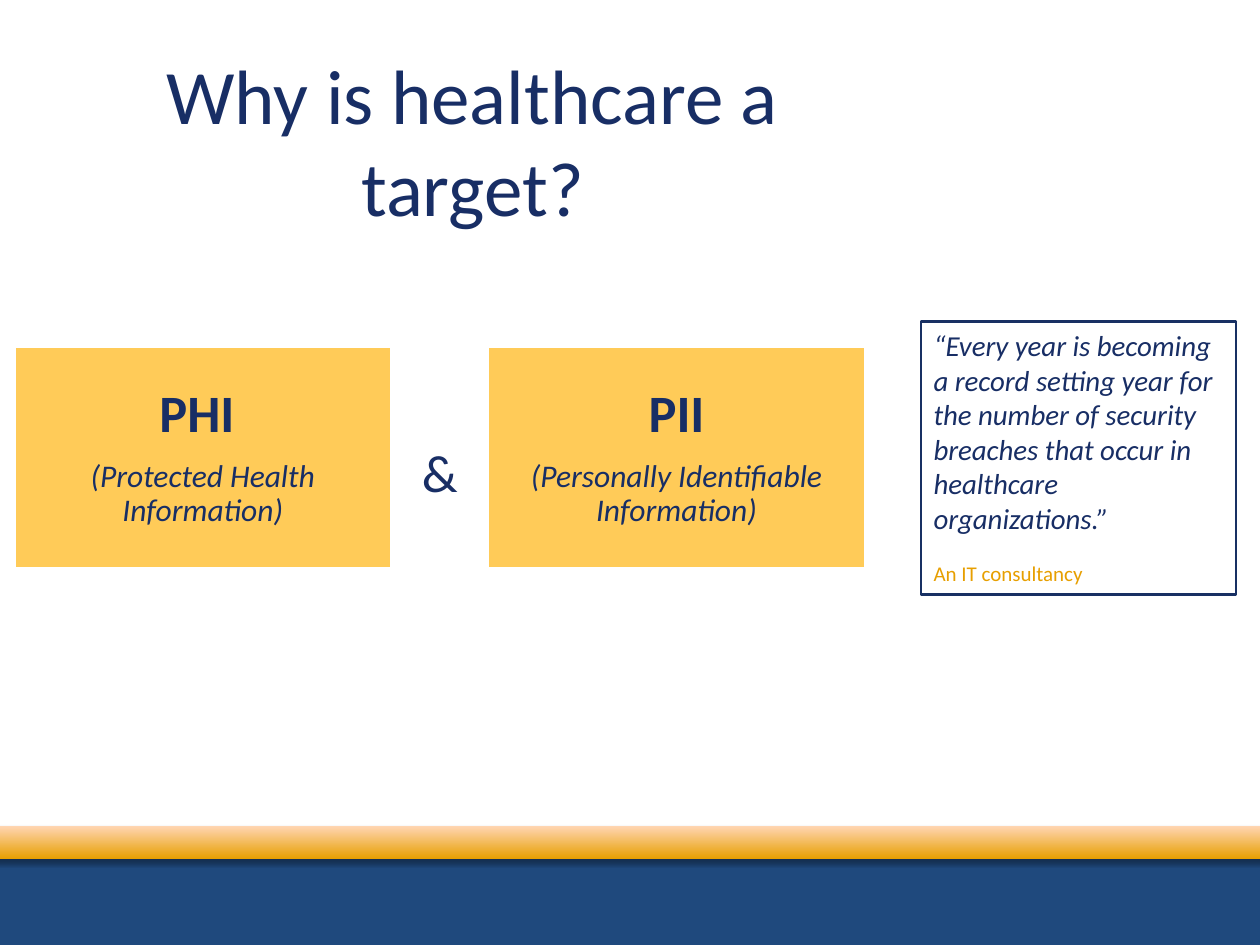
from dataclasses import dataclass

import pptx
import pptx.dml.color
import pptx.enum.shapes
import pptx.enum.text
import pptx.oxml
import pptx.oxml.ns
import pptx.util
from pptx.util import Cm, Pt

ALIGN = pptx.enum.text.PP_ALIGN
ANCHOR = pptx.enum.text.MSO_ANCHOR
RECT = pptx.enum.shapes.MSO_SHAPE.RECTANGLE

NAVY, INK, FRAME = "1F497D", "182E65", "183063"
GOLD, PEACH, AMBER, WHITE = "E79F00", "FFD5B1", "FFCB58", "FFFFFF"


@dataclass
class Box:
    """Place and size in centimetres."""
    left: float
    top: float
    width: float
    height: float

    def lengths(self) -> list:
        return [Cm(v) for v in (self.left, self.top, self.width, self.height)]


@dataclass
class Term:
    short: str
    meaning: str


def rgb(value: str):
    return pptx.dml.color.RGBColor.from_string(value)


def apply(obj, formats: dict) -> None:
    for name, value in formats.items():
        setattr(obj, name, value)


def write(p, text: str, size: float, color: str = INK, font: dict = {}, para: dict = {}) -> None:
    apply(p, para)
    r = p.add_run()
    r.text = text
    apply(r.font, {"name": "Calibri", "size": Pt(size), **font})
    r.font.color.rgb = rgb(color)


def add_rect(s, box: Box, fill: str = "", line: str = "", weight: float = 1):
    sp = s.shapes.add_shape(RECT, *box.lengths())
    sp.shadow.inherit = False
    if fill:
        sp.fill.solid()
        sp.fill.fore_color.rgb = rgb(fill)
    else:
        sp.fill.background()
    if line:
        sp.line.color.rgb = rgb(line)
        sp.line.width = Pt(weight)
    else:
        sp.line.fill.background()
    return sp


def add_shadow(sp) -> None:
    effects = sp._element.spPr.find(pptx.oxml.ns.qn("a:effectLst"))
    effects.append(pptx.oxml.parse_xml(
        f'<a:outerShdw {pptx.oxml.ns.nsdecls("a")} blurRad="{Pt(3.1)}" dist="{Pt(1.8)}" '
        'dir="5400000" rotWithShape="0"><a:srgbClr val="000000">'
        '<a:alpha val="35000"/></a:srgbClr></a:outerShdw>'))


def add_term(s, box: Box, term: Term) -> None:
    sp = add_rect(s, box, AMBER, WHITE, 2)
    tf = sp.text_frame
    inset = Cm(0.3)
    apply(tf, {"word_wrap": True, "vertical_anchor": ANCHOR.MIDDLE,
               "margin_left": inset, "margin_right": inset,
               "margin_top": inset, "margin_bottom": inset})
    para = {"alignment": ALIGN.CENTER, "line_spacing": 0.9}
    write(tf.paragraphs[0], term.short, 30, font={"bold": True},
          para={**para, "space_after": Pt(9)})
    write(tf.add_paragraph(), term.meaning, 18, font={"italic": True}, para=para)


def main() -> None:
    prs = pptx.Presentation()
    prs.slide_width, prs.slide_height = Cm(25.4), Cm(19.05)
    s = prs.slides.add_slide(prs.slide_layouts[5])

    # Footer bars
    add_shadow(add_rect(s, Box(-0.2, 17.32, 25.68, 1.83), NAVY))
    band = add_rect(s, Box(-0.28, 16.66, 25.96, 0.66), GOLD)
    band.fill.gradient()
    band.fill.gradient_angle = 90
    for stop, color in zip(band.fill.gradient_stops, (GOLD, PEACH)):
        stop.color.rgb = rgb(color)
    add_shadow(band)

    # Title
    title = s.shapes.title
    names = ("left", "top", "width", "height")
    apply(title, dict(zip(names, Box(1.27, 0.76, 16.51, 4.11).lengths())))
    title.text_frame.vertical_anchor = ANCHOR.MIDDLE
    write(title.text_frame.paragraphs[0], "Why is healthcare a target?", 44,
          para={"alignment": ALIGN.CENTER})

    # Two kinds of information, joined by an ampersand
    left, width, gap = 0.28, 7.62, 1.93
    terms = [Term("PHI ", "(Protected Health Information)"),
             Term("PII", "(Personally Identifiable Information)")]
    for i, term in enumerate(terms):
        add_term(s, Box(left + i * (width + gap), 6.99, width, 4.47), term)
    joiner = s.shapes.add_textbox(*Box(left + width, 8.74, gap, 1.55).lengths())
    joiner.text_frame.word_wrap = True
    write(joiner.text_frame.paragraphs[0], "&", 30, para={"alignment": ALIGN.CENTER})

    # Quotation
    quote = add_rect(s, Box(18.57, 6.48, 6.35, 5.51), line=FRAME, weight=1.5)
    tf = quote.text_frame
    apply(tf, {"word_wrap": True, "vertical_anchor": ANCHOR.TOP})
    write(tf.paragraphs[0], "“Every year is becoming a record setting year for the number of "
          "security breaches that occur in healthcare organizations.”", 16.5,
          font={"italic": True}, para={"alignment": ALIGN.LEFT})
    write(tf.add_paragraph(), "An IT consultancy", 12, GOLD,
          para={"alignment": ALIGN.LEFT, "space_before": Pt(14.5)})

    prs.save("out.pptx")


if __name__ == "__main__":
    main()
